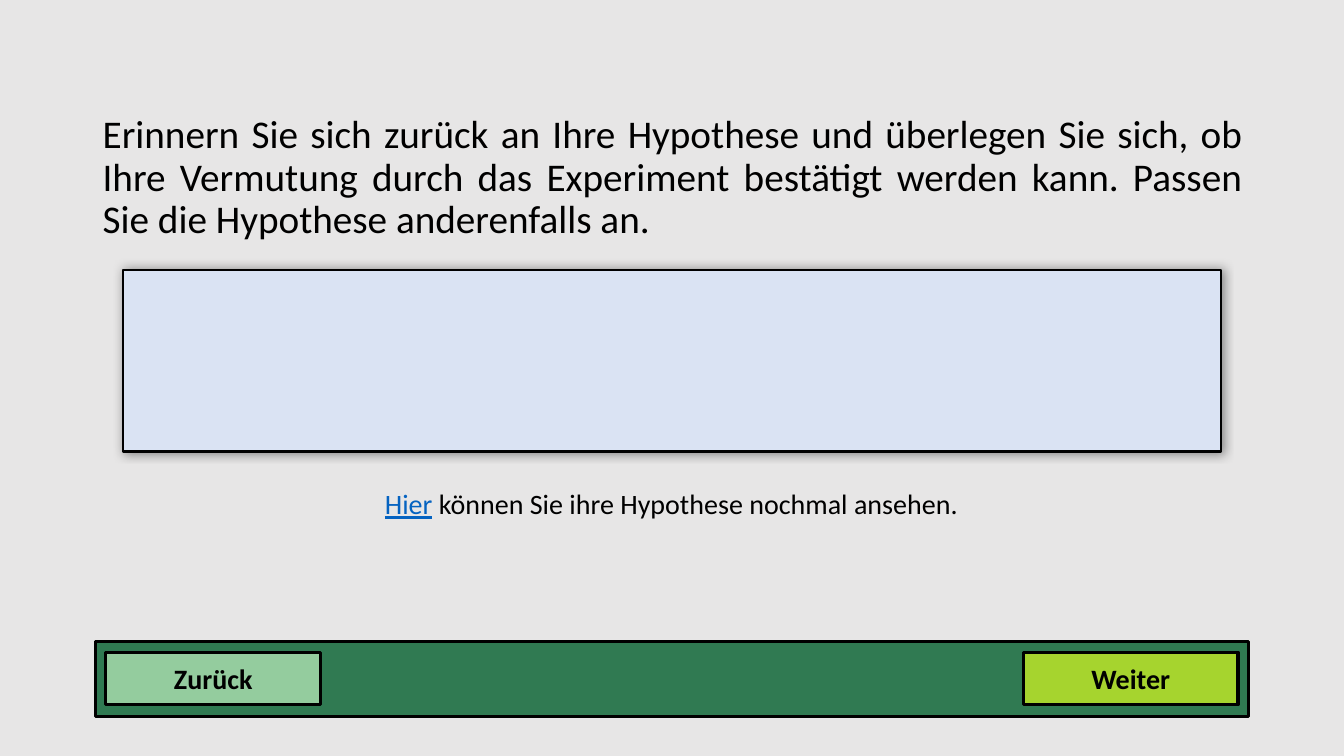
import pptx
import pptx.dml.color
import pptx.enum.shapes
import pptx.enum.text
import pptx.oxml
import pptx.oxml.ns
import pptx.util

ALIGN = pptx.enum.text.PP_ALIGN
ANCHOR = pptx.enum.text.MSO_ANCHOR
BLACK = "000000"


def color(value):
    return pptx.dml.color.RGBColor.from_string(value)


def write_text(shape, runs, size=20, bold=False, align=ALIGN.CENTER,
               anchor=ANCHOR.TOP, line_spacing=None, space_before=0, font="Calibri"):
    frame = shape.text_frame
    frame.word_wrap = True
    frame.vertical_anchor = anchor
    paragraph = frame.paragraphs[0]
    paragraph.alignment = align
    paragraph.space_before = pptx.util.Pt(space_before)
    if line_spacing:
        paragraph.line_spacing = line_spacing
    for text, ink, underline in runs:
        run = paragraph.add_run()
        run.text = text
        run.font.name = font
        run.font.size = pptx.util.Pt(size)
        run.font.bold = bold
        run.font.underline = underline
        run.font.color.rgb = color(ink)


class SlideBuilder:
    columns = 13.33
    rows = 7.5

    def __init__(self, presentation, background):
        self.width = presentation.slide_width
        self.height = presentation.slide_height
        self.slide = presentation.slides.add_slide(presentation.slide_layouts[6])
        fill = self.slide.background.fill
        fill.solid()
        fill.fore_color.rgb = color(background)

    def place(self, column, row, column_span, row_span):
        return (round(self.width * column / self.columns),
                round(self.height * row / self.rows),
                round(self.width * column_span / self.columns),
                round(self.height * row_span / self.rows))

    def text(self, area, runs, **style):
        box = self.slide.shapes.add_textbox(*self.place(*area))
        write_text(box, runs, **style)

    def panel(self, area, fill, line_width=2.25):
        shape = self.slide.shapes.add_shape(
            pptx.enum.shapes.MSO_SHAPE.RECTANGLE, *self.place(*area))
        shape.shadow.inherit = False
        shape.fill.solid()
        shape.fill.fore_color.rgb = color(fill)
        shape.line.color.rgb = color(BLACK)
        shape.line.width = pptx.util.Pt(line_width)
        return shape

    def button(self, column, label, fill):
        shape = self.panel((column, 6.47, 2.13, 0.52), fill)
        write_text(shape, [(label, BLACK, False)], bold=True, anchor=ANCHOR.MIDDLE)

    def glow_panel(self, area, fill, blur, opacity):
        shape = self.panel(area, fill, line_width=1.5)
        effects = shape._element.spPr.find(pptx.oxml.ns.qn("a:effectLst"))
        effects.append(pptx.oxml.parse_xml(
            f'<a:outerShdw {pptx.oxml.ns.nsdecls("a")} blurRad="{pptx.util.Pt(blur)}" '
            f'dist="0" algn="ctr" rotWithShape="0"><a:srgbClr val="{BLACK}">'
            f'<a:alpha val="{opacity * 1000}"/></a:srgbClr></a:outerShdw>'))


def main():
    presentation = pptx.Presentation()
    presentation.slide_width = pptx.util.Inches(SlideBuilder.columns)
    presentation.slide_height = pptx.util.Inches(SlideBuilder.rows)
    builder = SlideBuilder(presentation, "E7E6E6")

    task = ("Erinnern Sie sich zurück an Ihre Hypothese und überlegen Sie sich, "
            "ob Ihre Vermutung durch das Experiment bestätigt werden kann. "
            "Passen Sie die Hypothese anderenfalls an.")
    builder.text((0.92, 1.09, 11.5, 2.88), [(task, BLACK, False)], size=28,
                 align=ALIGN.JUSTIFY, line_spacing=0.9, space_before=10)

    builder.panel((0.95, 6.36, 11.43, 0.75), "307A52")
    for column, label, fill in ((1.05, "Zurück", "94CC9E"), (10.15, "Weiter", "A6D42E")):
        builder.button(column, label, fill)

    builder.text((3.33, 4.78, 6.66, 0.44),
                 [("Hier", "0563C1", True),
                  (" können Sie ihre Hypothese nochmal ansehen.", BLACK, False)])
    builder.glow_panel((1.22, 2.68, 10.89, 1.8), "DAE3F3", blur=8, opacity=40)

    presentation.save("out.pptx")


if __name__ == "__main__":
    main()
